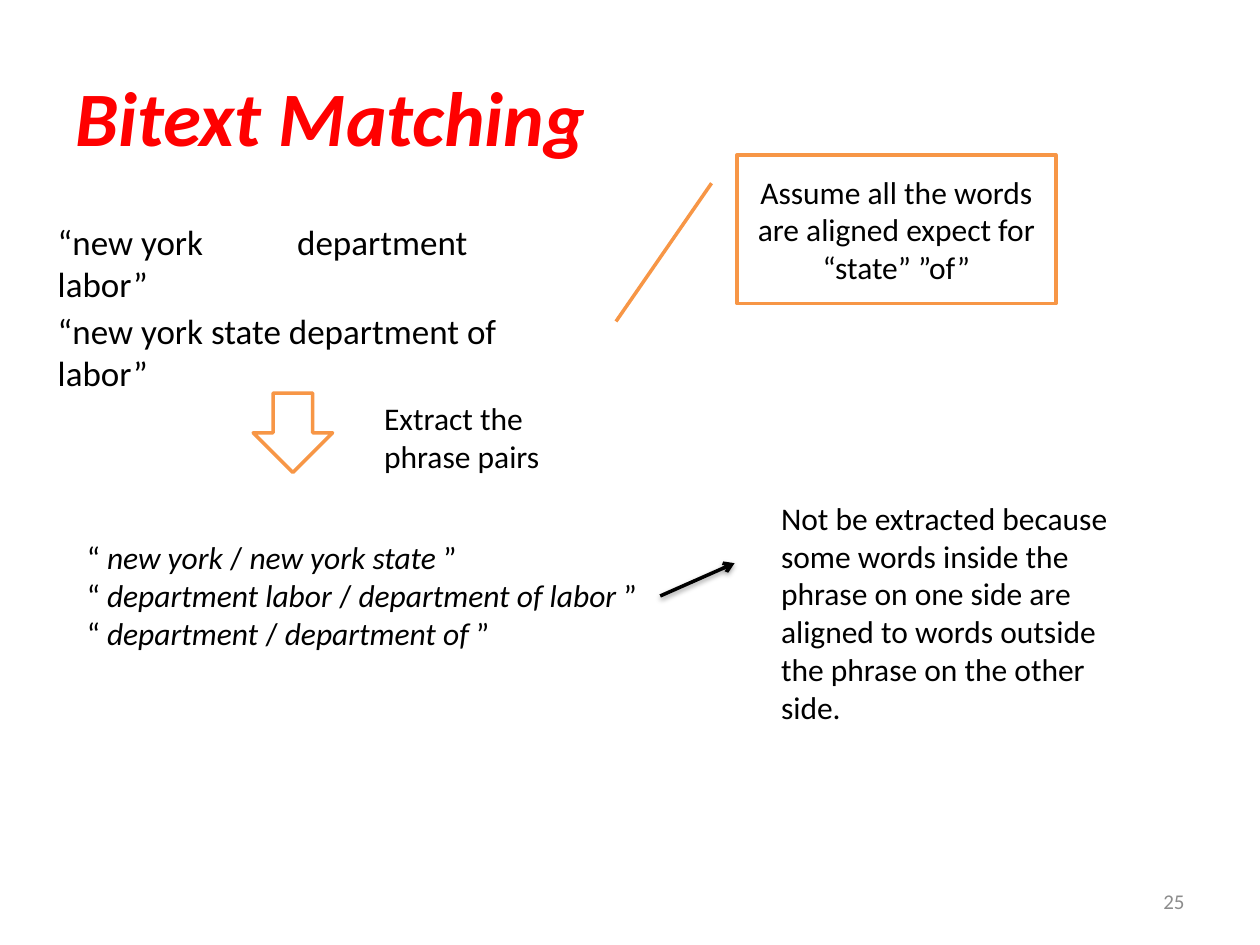
from lxml.etree import SubElement
from pptx import Presentation
from pptx.dml.color import RGBColor
from pptx.enum.shapes import MSO_CONNECTOR, MSO_SHAPE
from pptx.enum.text import MSO_ANCHOR, PP_ALIGN
from pptx.oxml import parse_xml
from pptx.oxml.ns import nsdecls, qn
from pptx.util import Inches, Pt

RED = RGBColor(0xFF, 0x00, 0x00)
BLACK = RGBColor(0x00, 0x00, 0x00)
WHITE = RGBColor(0xFF, 0xFF, 0xFF)
GRAY = RGBColor(0x8C, 0x8C, 0x8C)
ORANGE = RGBColor(0xF7, 0x96, 0x46)

# Content: a paragraph is a string or a list of (text, italic) runs
TITLE = "Bitext Matching"
SOURCE = "“new york\tdepartment\tlabor”"
TARGET = "“new york state department of labor”"
STEP = "Extract the phrase pairs"
PAIRS = [("new york", "new york state"),
         ("department labor", "department of labor"),
         ("department", "department of")]
CALLOUT = "Assume all the words are aligned expect for “state” ”of”"
REASON = ["Not be extracted because some words inside the phrase on one side "
          "are aligned to words outside the phrase on the other", "side."]
PAGE = "25"
TAB_STOPS = (1.9, 3.6)

prs = Presentation()
prs.slide_width, prs.slide_height = Inches(10), Inches(7.5)
s = prs.slides.add_slide(prs.slide_layouts[6])


def write(sp, *paras, size=18, color=BLACK, bold=False, italic=False,
          align=PP_ALIGN.LEFT, anchor=MSO_ANCHOR.TOP):
    tf = sp.text_frame
    tf.word_wrap = True
    tf.vertical_anchor = anchor
    for i, para in enumerate(paras):
        p = tf.add_paragraph() if i else tf.paragraphs[0]
        p.alignment = align
        for text, slant in [(para, italic)] if isinstance(para, str) else para:
            r = p.add_run()
            r.text = text
            f = r.font
            f.name, f.size, f.bold, f.italic = "Calibri", Pt(size), bold, slant
            f.color.rgb = color
    return sp


def box(x, y, w, h):
    return s.shapes.add_textbox(*map(Inches, (x, y, w, h)))


def outlined(kind, x, y, w, h):
    sp = s.shapes.add_shape(kind, *map(Inches, (x, y, w, h)))
    sp.shadow.inherit = False
    sp.fill.solid()
    sp.fill.fore_color.rgb = WHITE
    sp.line.color.rgb = ORANGE
    sp.line.width = Pt(2)
    return sp


# Title and the two aligned sentences
write(box(0.5, 0.29, 9, 1.25), TITLE, size=44, color=RED, bold=True,
      italic=True, anchor=MSO_ANCHOR.MIDDLE)
sentence = write(box(0.36, 1.7, 4.48, 0.74), SOURCE, size=20)
tabs = SubElement(sentence.text_frame.paragraphs[0]._p.get_or_add_pPr(),
                  qn("a:tabLst"))
for stop in TAB_STOPS:
    SubElement(tabs, qn("a:tab"), pos=str(Inches(stop)), algn="l")
write(box(0.36, 2.41, 4.41, 0.44), TARGET, size=20)

# Extraction step and resulting pairs
outlined(MSO_SHAPE.DOWN_ARROW, 2.01, 3.12, 0.63, 0.63)
write(box(2.95, 3.12, 1.81, 0.71), STEP)
write(box(0.59, 4.22, 4.65, 1.01),
      *[[("“ ", False), (left + " ", True), ("/ ", False),
         (right + " ", True), ("”", False)] for left, right in PAIRS])

# Callout on the alignment assumption
callout = outlined(MSO_SHAPE.LINE_CALLOUT_1, 5.85, 1.23, 2.53, 1.18)
for i, share in enumerate((0.19, -0.08, 1.12, -0.38)):
    callout.adjustments[i] = share
write(callout, CALLOUT, align=PP_ALIGN.CENTER, anchor=MSO_ANCHOR.MIDDLE)

# Arrow with a soft shadow, leading to the reason
arrow = s.shapes.add_connector(MSO_CONNECTOR.STRAIGHT,
                               *map(Inches, (5.24, 4.73, 5.83, 4.47)))
arrow.line.color.rgb = BLACK
arrow.line.width = Pt(2)
SubElement(arrow.line._get_or_add_ln(), qn("a:tailEnd"), type="arrow")
arrow._element.spPr.append(parse_xml(
    f'<a:effectLst {nsdecls("a")}><a:outerShdw blurRad="{Pt(3.1)}" '
    f'dist="{Pt(1.6)}" dir="5400000" rotWithShape="0"><a:srgbClr val="000000">'
    '<a:alpha val="38000"/></a:srgbClr></a:outerShdw></a:effectLst>'))
write(box(6.1, 3.91, 2.91, 1.92), *REASON)

# Page number
write(box(7.17, 6.95, 2.33, 0.4), PAGE, size=12, color=GRAY,
      align=PP_ALIGN.RIGHT, anchor=MSO_ANCHOR.MIDDLE)

prs.save("out.pptx")
